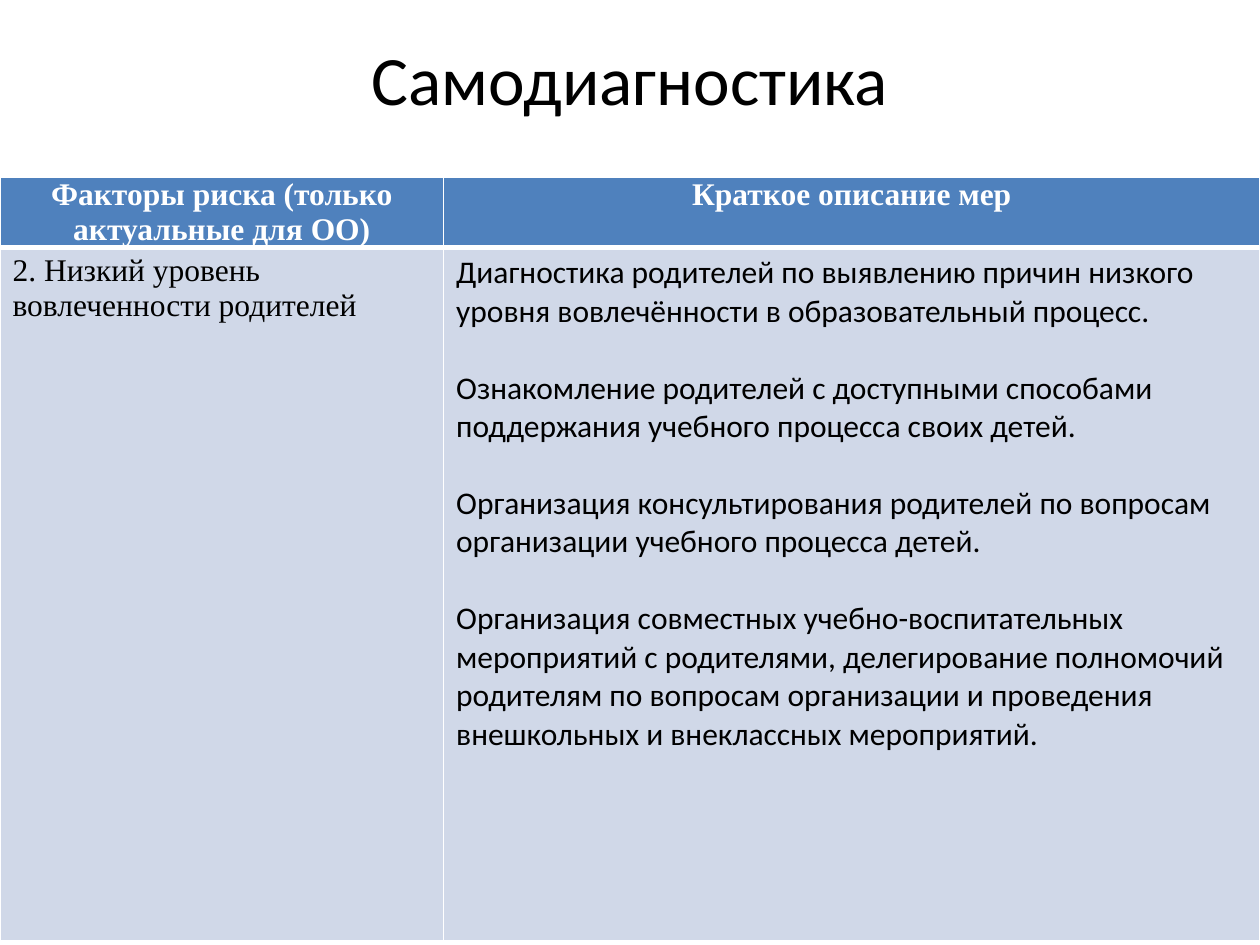
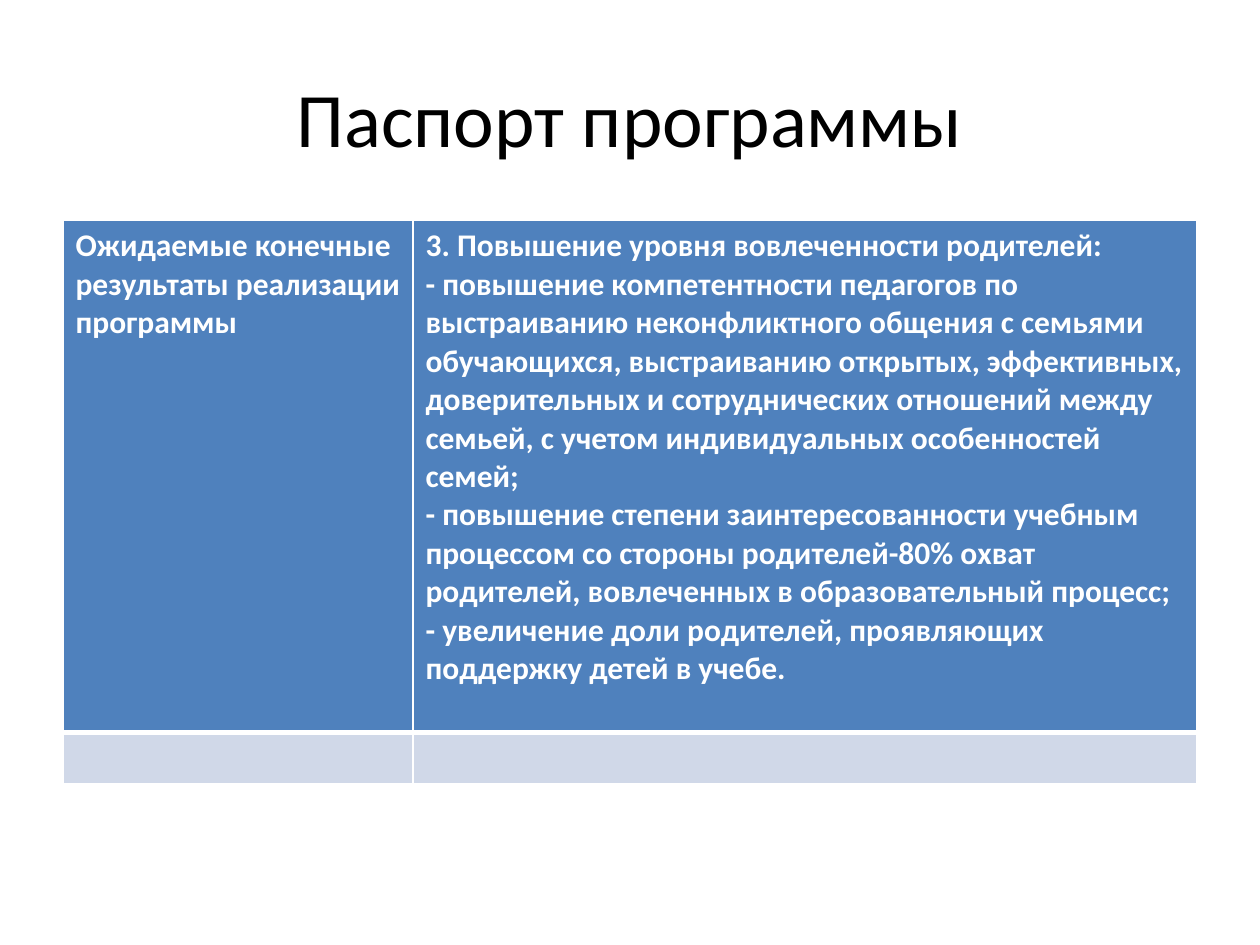
from dataclasses import dataclass

from lxml.etree import SubElement as Sub
from pptx import Presentation
from pptx.dml.color import RGBColor
from pptx.enum.text import MSO_ANCHOR as Anchor, MSO_AUTO_SIZE as Fit, PP_ALIGN as Align
from pptx.oxml.ns import qn
from pptx.util import Pt

WHITE, BLACK, BLUE, PALE = "FFFFFF", "000000", "4F81BD", "D0D8E8"
SANS, SERIF = "Calibri", "Times New Roman"
THIN, THICK = 1, 3


@dataclass
class Cell:
    lines: tuple[str, ...] = ()
    face: str = SANS
    align: Align = Align.LEFT
    gap: float = 0
    pad: tuple[float, float] = (7.2, 3.6)


@dataclass
class Page:
    title: str
    size: float
    depth: float
    spot: tuple[float, float]
    cols: tuple[float, ...]
    rows: tuple[float, ...]
    cells: tuple[tuple[Cell, ...], ...]


def head(text: str) -> Cell:
    return Cell((text,), SERIF, Align.CENTER, pad=(5.76, 0))


PAGES = (
    Page(
        "Самодиагностика", 39.6, 46, (0, 101.5), (253.5, 466.5), (39, 396),
        (
            (head("Факторы риска (только актуальные для ОО)"), head("Краткое описание мер")),
            (
                Cell(("2. Низкий уровень вовлеченности родителей",), SERIF),
                Cell((
                    "Диагностика родителей по выявлению причин низкого уровня "
                    "вовлечённости в образовательный процесс.",
                    "Ознакомление родителей с доступными способами поддержания "
                    "учебного процесса своих детей.",
                    "Организация консультирования родителей по вопросам "
                    "организации учебного процесса детей.",
                    "Организация совместных учебно-воспитательных мероприятий с "
                    "родителями, делегирование полномочий родителям по вопросам "
                    "организации и проведения внешкольных и внеклассных мероприятий.",
                ), gap=22),
            ),
        ),
    ),
    Page(
        "Паспорт программы", 44, 90, (36, 126), (200, 448), (292.5, 29.2),
        (
            (
                Cell(("Ожидаемые конечные результаты реализации программы",)),
                Cell((
                    "3. Повышение уровня вовлеченности родителей:",
                    "- повышение компетентности педагогов по выстраиванию "
                    "неконфликтного общения с семьями обучающихся, выстраиванию "
                    "открытых, эффективных, доверительных и сотруднических отношений "
                    "между семьей, с учетом индивидуальных особенностей семей;",
                    "- повышение степени заинтересованности учебным процессом со "
                    "стороны родителей-80% охват родителей, вовлеченных в "
                    "образовательный процесс;",
                    "- увеличение доли родителей, проявляющих поддержку детей в учебе.",
                )),
            ),
            (Cell(), Cell()),
        ),
    ),
)


def paint(item, tone: str) -> None:
    """Colour a font or a fill."""
    if hasattr(item, "solid"):
        item.solid()
        item.fore_color.rgb = RGBColor.from_string(tone)
    else:
        item.color.rgb = RGBColor.from_string(tone)


def write(para, text: str, size: float, face: str, tone: str, bold: bool = False) -> None:
    run = para.add_run()
    run.text = text
    run.font.size, run.font.name, run.font.bold = Pt(size), face, bold
    paint(run.font, tone)


def edge(cell, side: str, width: float) -> None:
    """Add a white border; borders must come before the cell's fill."""
    props = cell._tc.get_or_add_tcPr()
    line = Sub(props, qn(f"a:ln{side}"), w=str(Pt(width)))
    Sub(Sub(line, qn("a:solidFill")), qn("a:srgbClr"), val=WHITE)


def fill_cell(cell, data: Cell, top: bool) -> None:
    for side in "LRTB":
        joint = side == ("B" if top else "T")
        edge(cell, side, THICK if joint else THIN)
    paint(cell.fill, BLUE if top else PALE)
    across, down = map(Pt, data.pad)
    cell.margin_left = cell.margin_right = across
    cell.margin_top = cell.margin_bottom = down
    frame = cell.text_frame
    for i, text in enumerate(data.lines):
        para = frame.add_paragraph() if i else frame.paragraphs[0]
        para.alignment = data.align
        if i and data.gap:
            para.space_before = Pt(data.gap)
        write(para, text, 18, data.face, WHITE if top else BLACK, top)


def add_title(slide, page: Page) -> None:
    title = slide.shapes.title
    title.left, title.top = Pt(36), Pt(21.6)
    title.width, title.height = Pt(648), Pt(page.depth)
    frame = title.text_frame
    frame.word_wrap, frame.auto_size = True, Fit.NONE
    frame.vertical_anchor = Anchor.MIDDLE
    para = frame.paragraphs[0]
    para.alignment = Align.CENTER
    write(para, page.title, page.size, SANS, BLACK)


def add_grid(slide, page: Page) -> None:
    left, top = map(Pt, page.spot)
    table = slide.shapes.add_table(
        len(page.rows), len(page.cols), left, top, Pt(sum(page.cols)), Pt(sum(page.rows))
    ).table
    for col, width in zip(table.columns, page.cols):
        col.width = Pt(width)
    for row, height in zip(table.rows, page.rows):
        row.height = Pt(height)
    for r, line in enumerate(page.cells):
        for c, data in enumerate(line):
            fill_cell(table.cell(r, c), data, r == 0)


def main() -> None:
    deck = Presentation()
    deck.slide_width, deck.slide_height = Pt(720), Pt(540)
    for page in PAGES:
        slide = deck.slides.add_slide(deck.slide_layouts[5])
        add_title(slide, page)
        add_grid(slide, page)
    deck.save("out.pptx")


if __name__ == "__main__":
    main()
